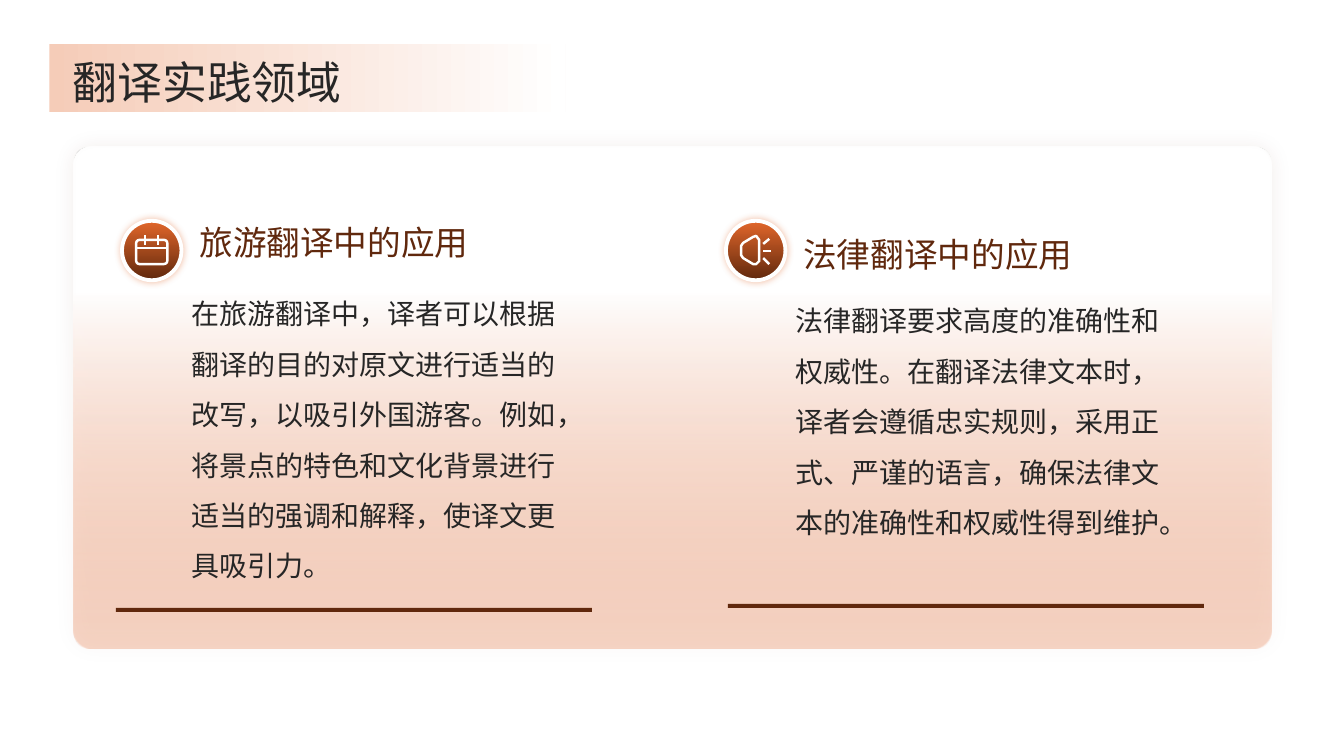
from lxml.etree import SubElement as Sub
from pptx import Presentation
from pptx.dml.color import RGBColor as Rgb
from pptx.enum.shapes import MSO_CONNECTOR as Con, MSO_SHAPE as Kind
from pptx.enum.text import MSO_ANCHOR as Anchor, PP_ALIGN as Align
from pptx.oxml.ns import qn
from pptx.util import Inches, Pt

HUES = {"dark": "60280D", "rust": "E2672B", "peach": "EC9972",
        "pale": "F5CCB8", "ink": "262626", "white": "FFFFFF"}


class Deck:
    """Holds the style and the current slide."""
    font = "Noto Sans CJK SC"
    pen = 1.75

    def __init__(self):
        self.prs = Presentation()
        self.prs.slide_width, self.prs.slide_height = Inches(13.33), Inches(7.5)
        self.page = self.prs.slides.add_slide(self.prs.slide_layouts[5])
        self.items = self.page.shapes

    def hue(self, name):
        return Rgb.from_string(HUES[name])

    def shape(self, kind, box, fill=None, edge=None, width=0):
        item = self.items.add_shape(kind, *map(Inches, box))
        self.paint(item, fill, edge, width)
        return item

    def paint(self, item, fill, edge, width):
        item.shadow.inherit = False
        if fill:
            item.fill.solid()
            item.fill.fore_color.rgb = self.hue(fill)
        else:
            item.fill.background()
        if edge:
            item.line.color.rgb = self.hue(edge)
            item.line.width = Pt(width)
        else:
            item.line.fill.background()

    def blend(self, item, stops, angle):
        """Gradient from (place, hue) pairs."""
        item.fill.gradient()
        item.fill.gradient_angle = angle
        for stop, (place, name) in zip(item.fill.gradient_stops, stops):
            stop.position = place
            stop.color.rgb = self.hue(name)

    def alpha(self, node, share):
        Sub(node, qn("a:alpha")).set("val", str(share * 1000))

    def glow(self, item, name, share, blur):
        """Soft shadow on all sides."""
        list_ = item.element.spPr.find(qn("a:effectLst"))
        shade = Sub(list_, qn("a:outerShdw"), blurRad=str(Pt(blur)), dist="0",
                    dir="0", algn="ctr", rotWithShape="0")
        self.alpha(Sub(shade, qn("a:srgbClr"), val=HUES[name]), share)

    def text(self, box, words, size, name, space, item=None):
        item = item or self.items.add_textbox(0, 0, 0, 0)
        item.left, item.top, item.width, item.height = map(Inches, box)
        item.text_frame.word_wrap = True
        para = item.text_frame.paragraphs[0]
        para.line_spacing = space
        para.alignment = Align.LEFT
        run = para.add_run()
        run.text = words
        run.font.size, run.font.name = Pt(size), self.font
        run.font.color.rgb = self.hue(name)
        Sub(run.font._element, qn("a:ea"), typeface=self.font)

    def title(self, box, words):
        item = self.items.title
        self.text(box, words, 32, "ink", 1.1, item)
        frame = item.text_frame
        frame.vertical_anchor = Anchor.MIDDLE
        frame.margin_left = frame.margin_right = 0
        frame.margin_top = frame.margin_bottom = 0
        return item

    def stroke(self, x1, y1, x2, y2):
        line = self.items.add_connector(Con.STRAIGHT, *map(Inches, (x1, y1, x2, y2)))
        line.line.color.rgb = self.hue("white")
        line.line.width = Pt(self.pen)
        Sub(line.element.spPr, qn("a:effectLst"))

    def badge(self, x, y):
        disc = self.shape(Kind.FLOWCHART_CONNECTOR, (x, y, 0.59, 0.59),
                          "dark", "white", 2.75)
        self.blend(disc, [(0, "dark"), (1, "rust")], 90)
        self.glow(disc, "rust", 40, 5)

    def diary(self, x, y):
        """Calendar icon."""
        page = self.shape(Kind.ROUNDED_RECTANGLE, (x + 0.14, y + 0.19, 0.31, 0.24),
                          None, "white", self.pen)
        page.adjustments[0] = 0.14
        self.stroke(x + 0.14, y + 0.27, x + 0.45, y + 0.27)
        for ring in (0.23, 0.36):
            self.stroke(x + ring, y + 0.14, x + ring, y + 0.24)

    def horn(self, x, y):
        """Loudspeaker icon."""
        rim = [(0.15, 0.25), (0.17, 0.22), (0.27, 0.16), (0.3, 0.15),
               (0.33, 0.19), (0.33, 0.4), (0.3, 0.43), (0.27, 0.43),
               (0.17, 0.37), (0.15, 0.34)]
        dots = [(Inches(x + a), Inches(y + b)) for a, b in rim]
        pen = self.items.build_freeform(*dots[0])
        pen.add_line_segments(dots[1:], close=True)
        self.paint(pen.convert_to_shape(), None, "white", self.pen)
        for x1, y1, x2, y2 in [(0.37, 0.23, 0.43, 0.18), (0.37, 0.3, 0.45, 0.3),
                               (0.37, 0.37, 0.43, 0.43)]:
            self.stroke(x + x1, y + y1, x + x2, y + y2)


def main():
    deck = Deck()

    # Card behind both fields
    card = deck.shape(Kind.ROUNDED_RECTANGLE, (0.73, 1.46, 11.88, 4.97), "white")
    card.adjustments[0] = 0.038
    deck.blend(card, [(0.29, "white"), (1, "peach")], 270)
    last = card.element.spPr.findall(".//" + qn("a:gs"))[-1]
    deck.alpha(last[0], 40)
    deck.glow(card, "dark", 8, 15)

    # Fields: left edge, head top, body top, body height, rule place, icon, words
    fields = [
        (1.21, 2.11, 2.73, 3.16, (1.15, 6.03), deck.diary, "旅游翻译中的应用",
         "在旅游翻译中，译者可以根据翻译的目的对原文进行适当的改写，以吸引外国游客。"
         "例如，将景点的特色和文化背景进行适当的强调和解释，使译文更具吸引力。"),
        (7.2, 2.23, 2.8, 2.47, (7.22, 5.99), deck.horn, "法律翻译中的应用",
         "法律翻译要求高度的准确性和权威性。在翻译法律文本时，译者会遵循忠实规则，"
         "采用正式、严谨的语言，确保法律文本的准确性和权威性得到维护。"),
    ]
    for x, top, low, tall, rule, icon, head, body in fields:
        deck.text((x + 0.59, low, 3.94, tall), body, 20, "ink", 1.5)
        deck.text((x + 0.67, top, 3.94, 0.4), head, 24, "dark", 1.1)
        deck.shape(Kind.RECTANGLE, (*rule, 4.72, 0.04), "dark")
        deck.badge(x, 2.19)
        icon(x, 2.19)

    # Title on its fading band
    band = deck.shape(Kind.RECTANGLE, (0.49, 0.44, 5.12, 0.67), "pale")
    deck.blend(band, [(0, "pale"), (1, "white")], 0)
    title = deck.title((0.72, 0.53, 11.88, 0.51), "翻译实践领域")
    band.element.addnext(title.element)

    deck.prs.save("out.pptx")


if __name__ == "__main__":
    main()
